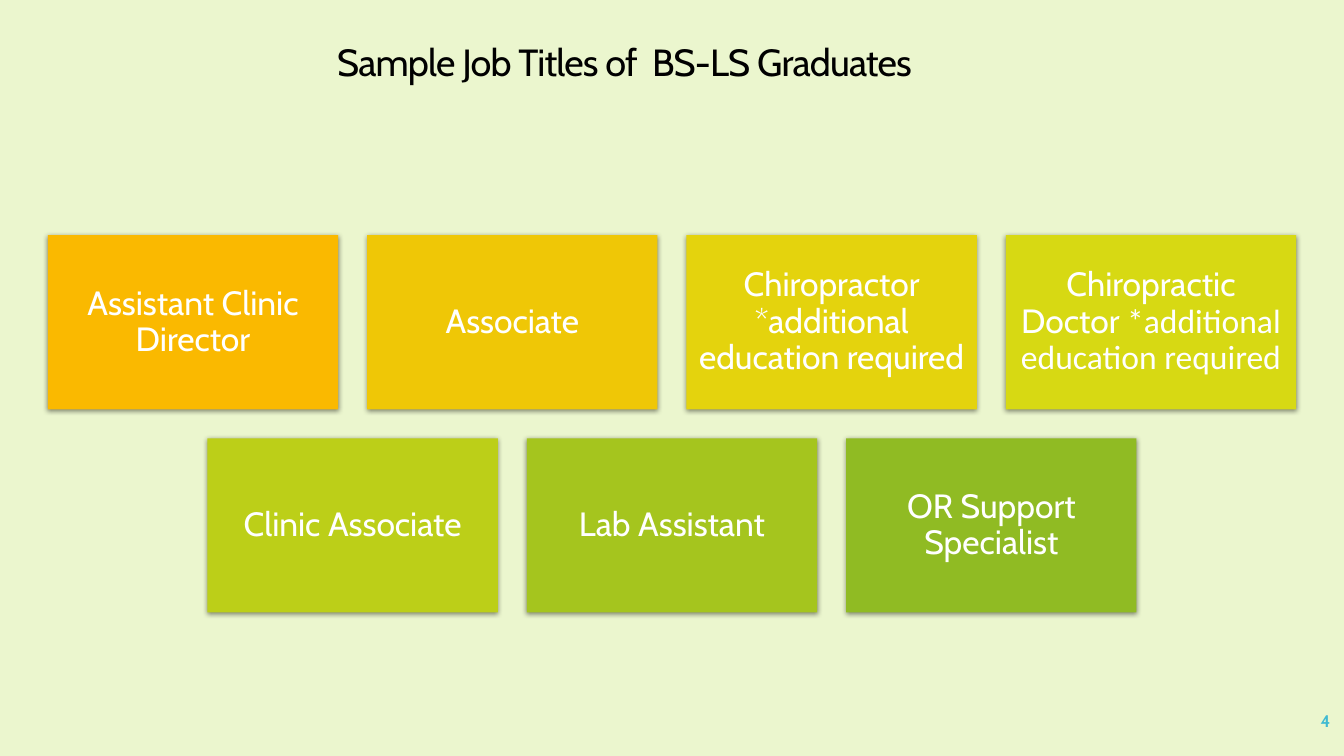
from lxml.etree import SubElement
from pptx import Presentation
from pptx.dml.color import RGBColor
from pptx.enum.shapes import MSO_SHAPE as SHAPE
from pptx.enum.text import MSO_ANCHOR as ANCHOR, MSO_AUTO_SIZE as AUTO, PP_ALIGN as ALIGN
from pptx.oxml.ns import qn
from pptx.util import Pt

COLORS = {"page": "EBF6CE", "title": "000000", "card_text": "FFFFFF",
          "number": "40BAD2", "shadow": "000000"}
CARD_ROWS = [
    [("FAB900", [("Assistant Clinic Director", "Cabin")]),
     ("EFC706", [("Associate", "Cabin")]),
     ("E4D30D", [("Chiropractor *additional education required", "Cabin")]),
     ("D7D913", [("Chiropractic Doctor ", "Cabin"),
                 ("*additional education required", "Calibri")])],
    [("BCCF18", [("Clinic Associate", "Cabin")]),
     ("A5C51E", [("Lab Assistant", "Cabin")]),
     ("90BB23", [("OR Support Specialist", "Cabin")])],
]
CARD_W, CARD_H, GAP = 207.4, 124.4, 20.7


def rgb(value):
    return RGBColor.from_string(value)


def add_text(tf, runs, size, color, align, line_spacing=None, bold=False):
    tf.word_wrap = True
    tf.auto_size = AUTO.NONE
    tf.vertical_anchor = ANCHOR.MIDDLE
    p = tf.paragraphs[0]
    p.alignment = align
    p.line_spacing = line_spacing
    for text, font in runs:
        r = p.add_run()
        r.text = text
        r.font.name = font
        r.font.size = Pt(size)
        r.font.bold = bold
        r.font.color.rgb = rgb(color)
    return p


def add_shadow(sp):
    sp.shadow.inherit = False
    effects = sp._element.spPr.find(qn("a:effectLst"))
    shadow = SubElement(effects, qn("a:outerShdw"), blurRad=str(Pt(3.5)),
                        dist=str(Pt(1.1)), dir="5400000", algn="ctr", rotWithShape="0")
    color = SubElement(shadow, qn("a:srgbClr"), val=COLORS["shadow"])
    SubElement(color, qn("a:alpha"), val="45000")


def add_title(s, x, y, w, h):
    sp = s.shapes.title
    sp.left, sp.top, sp.width, sp.height = Pt(x), Pt(y), Pt(w), Pt(h)
    p = add_text(sp.text_frame, [("Sample Job Titles of\u00a0\u00a0BS-LS Graduates", "Cabin")],
                 27, COLORS["title"], ALIGN.CENTER, 0.9)
    p.runs[0].font._element.set("spc", "-60")


def add_card(s, x, y, fill, runs):
    sp = s.shapes.add_shape(SHAPE.RECTANGLE, Pt(x), Pt(y), Pt(CARD_W), Pt(CARD_H))
    sp.fill.solid()
    sp.fill.fore_color.rgb = rgb(fill)
    sp.line.fill.background()
    add_shadow(sp)
    tf = sp.text_frame
    tf.margin_left = tf.margin_right = tf.margin_top = tf.margin_bottom = Pt(7.2)
    add_text(tf, runs, 24, COLORS["card_text"], ALIGN.CENTER, 0.9)


def add_cards(s, x, y, w):
    for i, row in enumerate(CARD_ROWS):
        row_w = len(row) * (CARD_W + GAP) - GAP
        left = x + (w - row_w) / 2
        for j, (fill, runs) in enumerate(row):
            add_card(s, left + j * (CARD_W + GAP), y + i * (CARD_H + GAP), fill, runs)


def add_number(s, x, y, w, h):
    sp = s.shapes.add_textbox(Pt(x), Pt(y), Pt(w), Pt(h))
    add_text(sp.text_frame, [("4", "Cabin")], 12, COLORS["number"], ALIGN.RIGHT, bold=True)


def main():
    prs = Presentation()
    prs.slide_width, prs.slide_height = Pt(960), Pt(540)
    s = prs.slides.add_slide(prs.slide_layouts[5])
    s.background.fill.solid()
    s.background.fill.fore_color.rgb = rgb(COLORS["page"])
    add_title(s, 0, 28.8, 892, 33.8)
    add_cards(s, 0, 168, 960)
    add_number(s, 837.4, 500.4, 120, 28.8)
    prs.save("out.pptx")


if __name__ == "__main__":
    main()
